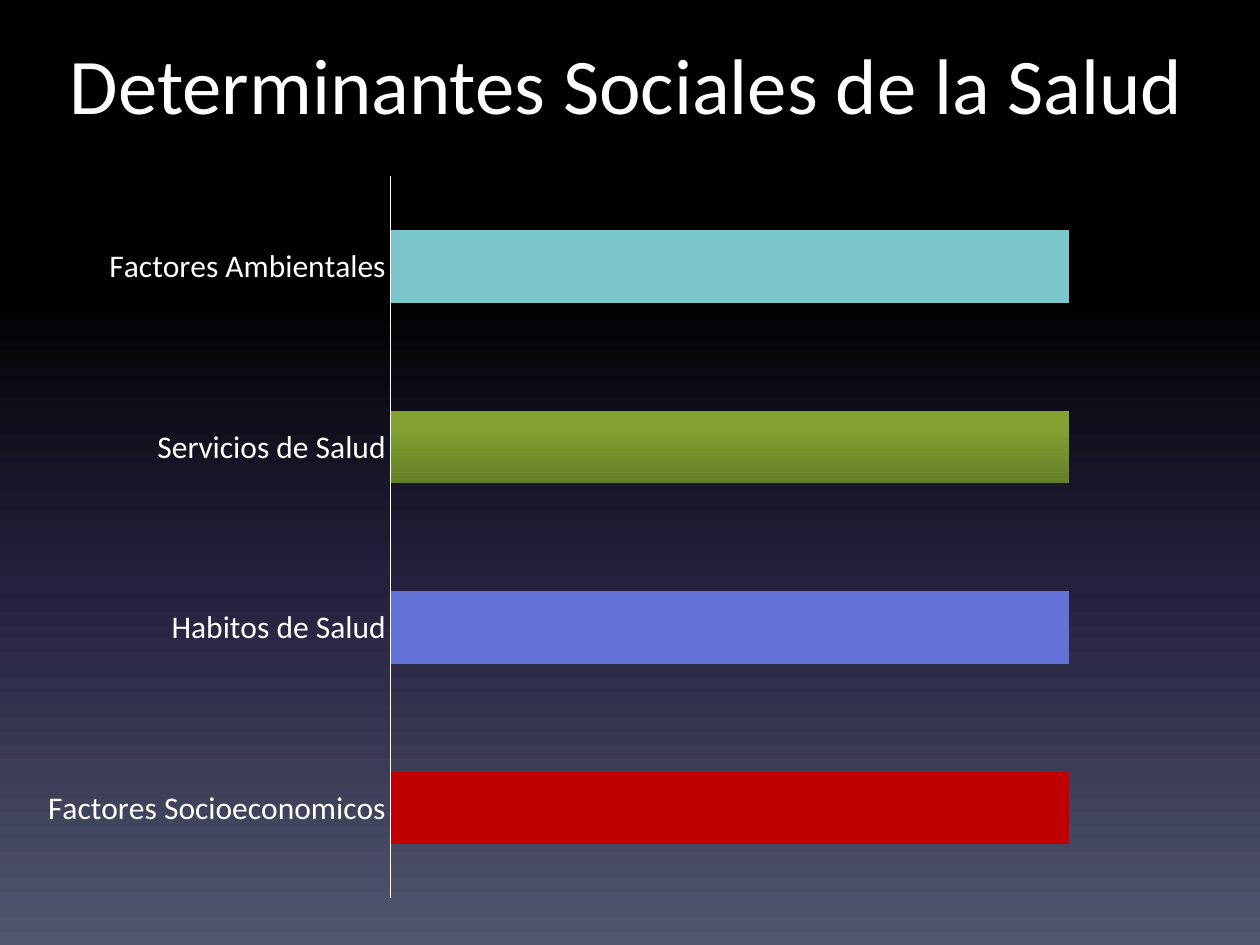
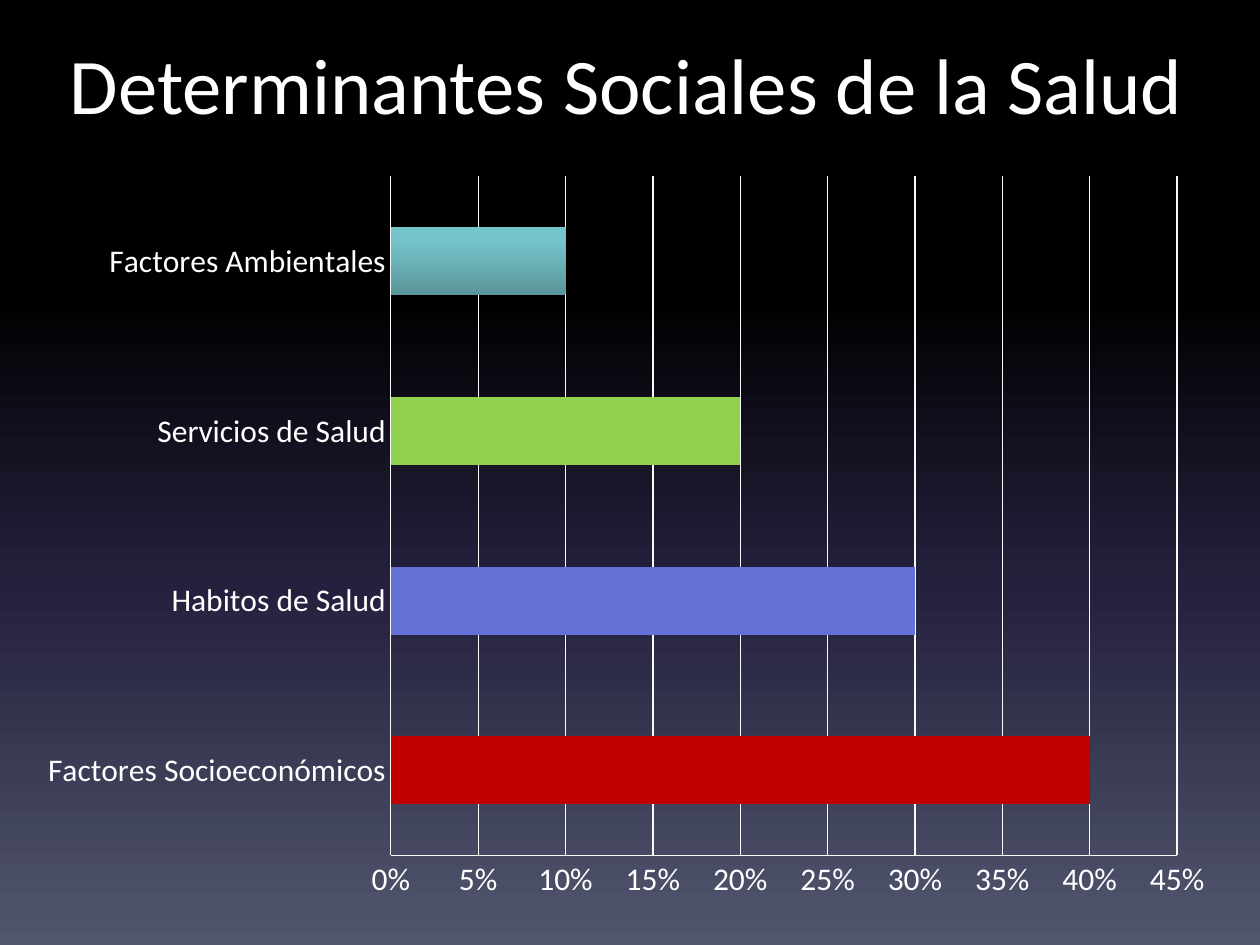
from copy import deepcopy

from pptx import Presentation
from pptx.chart.data import CategoryChartData
from pptx.dml.color import RGBColor
from pptx.enum.chart import XL_CHART_TYPE as ChartType, XL_TICK_MARK as TickMark
from pptx.enum.text import MSO_ANCHOR as Anchor, PP_ALIGN as Align
from pptx.util import Inches, Pt

FONT = "Calibri"
WHITE = "FFFFFF"
AXIS_LINE = "F9F9F9"
RED, BLUE, LIME, AQUA = "C00000", "6471D6", "92D050", "7AC6CB"
AQUA_SHADE = [(0, "5A969B"), (80, "75C3CA"), (100, "74C6CC")]
GREEN_SHADE = [(0, "657F29"), (80, "83A232"), (100, "82A42F")]
NIGHT_SKY = [(0, "000000"), (31, "000000"), (62, "24213E"), (100, "51566D")]
TITLE = "Determinantes Sociales de la Salud"
TITLE_BOX = (0.19, 0.23, 9.56, 1.25)
CHART_BOX = (0.19, 1.28, 9.56, 5.97)


def rgb(code):
    return RGBColor.from_string(code)


def paint(fill, paint_spec, angle=90):
    if isinstance(paint_spec, str):
        fill.solid()
        fill.fore_color.rgb = rgb(paint_spec)
        return
    fill.gradient()
    fill.gradient_angle = angle
    first_stop = fill.gradient_stops[0]._gs
    for _ in paint_spec[2:]:
        first_stop.getparent().append(deepcopy(first_stop))
    for stop, (percent, code) in zip(fill.gradient_stops, paint_spec):
        stop.position = percent / 100
        stop.color.rgb = rgb(code)


def style_font(font, size):
    font.name = FONT
    font.size = Pt(size)
    font.color.rgb = rgb(WHITE)


def style_line(line):
    line.color.rgb = rgb(AXIS_LINE)
    line.width = Pt(0.75)


def place_title(slide, box):
    title = slide.shapes.title
    title.left, title.top, title.width, title.height = map(Inches, box)
    title.text_frame.text = TITLE
    title.text_frame.vertical_anchor = Anchor.TOP
    heading = title.text_frame.paragraphs[0]
    heading.alignment = Align.CENTER
    style_font(heading.font, 45)


def add_determinants_chart(slide, box, shares, top, step, overlap, show_scale):
    data = CategoryChartData(number_format="0%")
    data.categories = [name for name, _, _ in shares]
    data.add_series("Series 1", [value for _, value, _ in shares])
    chart = slide.shapes.add_chart(
        ChartType.BAR_CLUSTERED, *map(Inches, box), data).chart
    chart.has_title = False
    chart.has_legend = False
    style_font(chart.font, 18)

    bars = chart.plots[0]
    bars.gap_width = 150
    bars.overlap = overlap
    bars.vary_by_categories = False
    for index, (_, _, colour) in enumerate(shares):
        paint(bars.series[0].points[index].format.fill, colour)

    factors, scale = chart.category_axis, chart.value_axis
    for axis in (factors, scale):
        axis.major_tick_mark = TickMark.NONE
        axis.minor_tick_mark = TickMark.NONE
        style_line(axis.format.line)
    scale.minimum_scale, scale.maximum_scale, scale.major_unit = 0, top, step
    scale.tick_labels.number_format = "0%"
    scale.tick_labels.number_format_is_linked = False
    scale.visible = show_scale
    scale.has_major_gridlines = show_scale
    if show_scale:
        style_line(scale.major_gridlines.format.line)


def add_determinants_slide(deck, shares, **chart_options):
    slide = deck.slides.add_slide(deck.slide_layouts[5])
    place_title(slide, TITLE_BOX)
    add_determinants_chart(slide, CHART_BOX, shares, **chart_options)


def main():
    deck = Presentation()
    deck.slide_width, deck.slide_height = Inches(10), Inches(7.5)
    paint(deck.slide_master.background.fill, NIGHT_SKY, angle=270)

    equal_shares = [
        ("Factores Socioeconomicos", 100, RED),
        ("Habitos de Salud", 100, BLUE),
        ("Servicios de Salud", 100, GREEN_SHADE),
        ("Factores Ambientales", 100, AQUA),
    ]
    weighted_shares = [
        ("Factores Socioeconómicos", 0.4, RED),
        ("Habitos de Salud", 0.3, BLUE),
        ("Servicios de Salud", 0.2, LIME),
        ("Factores Ambientales", 0.1, AQUA_SHADE),
    ]
    add_determinants_slide(deck, equal_shares, top=120, step=20,
                           overlap=-25, show_scale=False)
    add_determinants_slide(deck, weighted_shares, top=0.45, step=0.05,
                           overlap=0, show_scale=True)
    deck.save("out.pptx")


if __name__ == "__main__":
    main()
